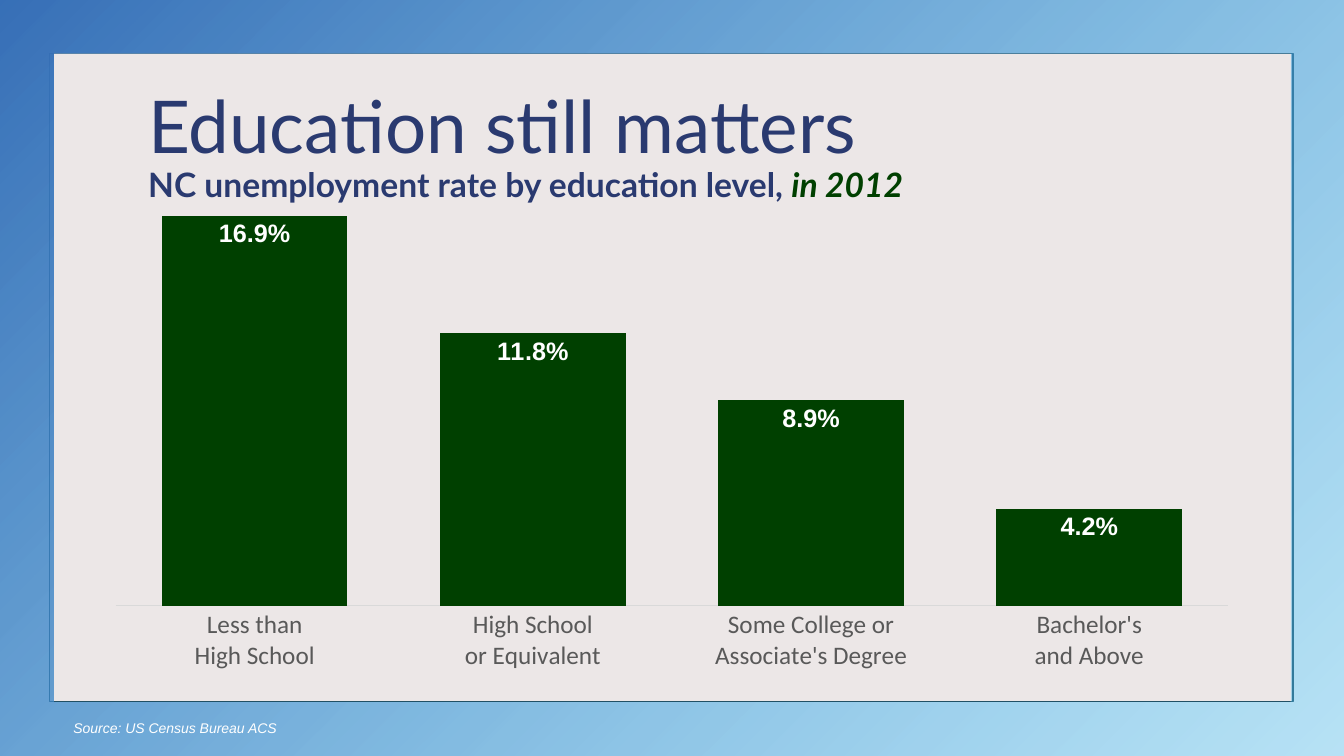
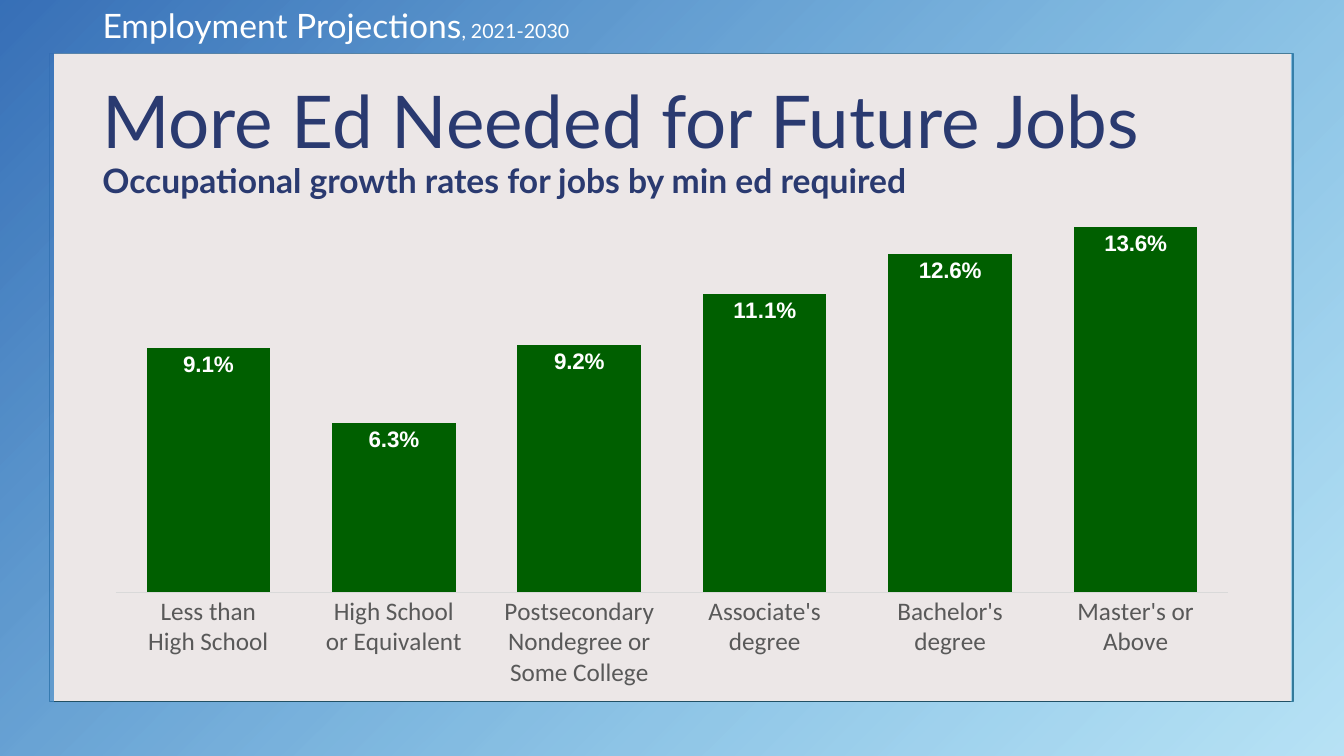
"""Build two slides on education, unemployment and job growth."""

from dataclasses import dataclass

from lxml import etree
from pptx import Presentation
from pptx.chart.data import CategoryChartData
from pptx.dml.color import RGBColor
from pptx.enum.chart import XL_CHART_TYPE, XL_LABEL_POSITION, XL_TICK_MARK
from pptx.enum.shapes import MSO_SHAPE
from pptx.enum.text import MSO_ANCHOR, MSO_AUTO_SIZE, PP_ALIGN
from pptx.oxml.ns import qn
from pptx.slide import Slide, SlideLayout
from pptx.util import Cm, Pt

COLUMN = XL_CHART_TYPE.COLUMN_CLUSTERED
INSIDE_END = XL_LABEL_POSITION.INSIDE_END
NO_TICK = XL_TICK_MARK.NONE
RECTANGLE, FRAME = MSO_SHAPE.RECTANGLE, MSO_SHAPE.FRAME
MIDDLE = MSO_ANCHOR.MIDDLE
NO_AUTOFIT = MSO_AUTO_SIZE.NONE
LEFT = PP_ALIGN.LEFT

WHITE = RGBColor(0xFF, 0xFF, 0xFF)
NAVY = RGBColor(0x2A, 0x3A, 0x70)
DARK_GREEN = RGBColor(0x00, 0x40, 0x00)
GREEN = RGBColor(0x00, 0x5F, 0x00)
GRAY = RGBColor(0x59, 0x59, 0x59)
AXIS_GRAY = RGBColor(0xD9, 0xD9, 0xD9)
PANEL_FILL = RGBColor(0xE8, 0xE2, 0xE2)
PANEL_LINE = RGBColor(0x21, 0x50, 0x65)
FRAME_DARK = RGBColor(0x37, 0x70, 0xB8)
FRAME_LIGHT = RGBColor(0x4C, 0xB7, 0xE7)

TITLE_FONT, LABEL_FONT, BODY_FONT = "Lato", "Calibri", "Arial"
PERCENT = "0.0%"
SLIDE_WIDTH, SLIDE_HEIGHT = Cm(33.87), Cm(19.05)
CONTENT_LEFT, CONTENT_WIDTH = Cm(2.33), Cm(29.21)


@dataclass(frozen=True)
class Area:
    """A rectangle on the slide."""

    left: int
    top: int
    width: int
    height: int


@dataclass(frozen=True)
class Span:
    """A piece of text with one look."""

    text: str
    size: float
    color: RGBColor
    bold: bool = False
    italic: bool = False
    break_after: bool = False


@dataclass(frozen=True)
class ColumnChart:
    """Rates by education level, with their look."""

    area: Area
    rates: dict[str, float]
    axis_maximum: float
    color: RGBColor
    label_size: float


def set_alpha(color_element: etree._Element, percent: int) -> None:
    """Make a colour partly transparent."""
    etree.SubElement(color_element, qn("a:alpha"), val=str(percent * 1000))


def decorate_layout(layout: SlideLayout, slide: Slide) -> None:
    """Give the layout its pale panel and gradient frame."""
    panel = slide.shapes.add_shape(RECTANGLE, Cm(1.25), Cm(1.35), Cm(31.34), Cm(16.33))
    panel.fill.solid()
    panel.fill.fore_color.rgb = PANEL_FILL
    set_alpha(panel.element.find(".//" + qn("a:srgbClr")), 80)
    panel.line.color.rgb = PANEL_LINE
    panel.line.width = Pt(1)

    frame = slide.shapes.add_shape(FRAME, 0, 0, SLIDE_WIDTH, SLIDE_HEIGHT)
    frame.adjustments[0] = 0.072
    frame.fill.gradient()
    frame.fill.gradient_angle = 315
    for stop, color in zip(frame.fill.gradient_stops, (FRAME_DARK, FRAME_LIGHT)):
        stop.color.rgb = color
    set_alpha(frame.element.findall(".//" + qn("a:srgbClr"))[-1], 40)
    frame.line.fill.background()

    for position, shape in enumerate((panel, frame), start=2):
        shape.shadow.inherit = False
        layout.shapes.element.insert(position, shape.element)


def write_text(box, area: Area, paragraphs: list[list[Span]],
               font: str = TITLE_FONT, line_spacing: float = 0.9) -> None:
    """Place a text shape and fill it with formatted paragraphs."""
    box.left, box.top, box.width, box.height = area.left, area.top, area.width, area.height
    text_frame = box.text_frame
    text_frame.word_wrap = True
    text_frame.auto_size = NO_AUTOFIT
    text_frame.vertical_anchor = MIDDLE
    for index, spans in enumerate(paragraphs):
        para = text_frame.add_paragraph() if index else text_frame.paragraphs[0]
        para.alignment = LEFT
        para.line_spacing = line_spacing
        para.font.name = font
        for span in spans:
            run = para.add_run()
            run.text = span.text
            run.font.size = Pt(span.size)
            run.font.color.rgb = span.color
            run.font.bold = span.bold
            run.font.italic = span.italic
            if span.break_after:
                para.add_line_break()


def add_text(slide: Slide, area: Area, paragraphs: list[list[Span]],
             font: str = TITLE_FONT, line_spacing: float = 0.9) -> None:
    """Add a text box."""
    box = slide.shapes.add_textbox(area.left, area.top, area.width, area.height)
    write_text(box, area, paragraphs, font, line_spacing)


def add_column_chart(slide: Slide, column_chart: ColumnChart) -> None:
    """Add a column chart with value labels inside the columns."""
    data = CategoryChartData(number_format=PERCENT)
    data.categories = list(column_chart.rates)
    data.add_series("Series 1", list(column_chart.rates.values()))
    area = column_chart.area
    chart = slide.shapes.add_chart(
        COLUMN, area.left, area.top, area.width, area.height, data).chart
    chart.has_legend = False
    chart.has_title = False
    chart.font.name = BODY_FONT
    chart.font.size = Pt(10)

    category_axis = chart.category_axis
    category_axis.major_tick_mark = NO_TICK
    category_axis.format.line.color.rgb = AXIS_GRAY
    category_axis.format.line.width = Pt(0.75)
    category_font = category_axis.tick_labels.font
    category_font.name = LABEL_FONT
    category_font.size = Pt(18)
    category_font.color.rgb = GRAY

    value_axis = chart.value_axis
    value_axis.visible = False
    value_axis.has_major_gridlines = False
    value_axis.minimum_scale = 0
    value_axis.maximum_scale = column_chart.axis_maximum

    plot = chart.plots[0]
    plot.gap_width = 50
    plot.overlap = -27
    plot.vary_by_categories = False
    series = plot.series[0]
    series.format.fill.solid()
    series.format.fill.fore_color.rgb = column_chart.color
    labels = series.data_labels
    labels.show_value = True
    labels.position = INSIDE_END
    labels.number_format = PERCENT
    labels.number_format_is_linked = False
    labels.font.name = BODY_FONT
    labels.font.size = Pt(column_chart.label_size)
    labels.font.bold = True
    labels.font.color.rgb = WHITE


def build_unemployment(slide: Slide) -> None:
    """Fill the slide on unemployment by education level."""
    write_text(slide.shapes.title, Area(Cm(3.48), Cm(1.88), Cm(27), Cm(3.68)), [[
        Span("Education still matters", 52, NAVY, break_after=True),
        Span("NC unemployment rate by education level, ", 24, NAVY, bold=True),
        Span("in 2012", 24, DARK_GREEN, bold=True, italic=True),
    ]])
    add_column_chart(slide, ColumnChart(
        Area(CONTENT_LEFT, Cm(4.55), CONTENT_WIDTH, Cm(12.6)),
        {
            "Less than\nHigh School": 0.169,
            "High School\nor Equivalent": 0.118,
            "Some College or\nAssociate's Degree": 0.089,
            "Bachelor's\nand Above": 0.042,
        },
        axis_maximum=0.18, color=DARK_GREEN, label_size=18))
    add_text(slide, Area(Cm(1.6), Cm(18.01), Cm(20.7), Cm(0.69)),
             [[Span("Source: US Census Bureau ACS", 10, WHITE, italic=True)]],
             BODY_FONT, 1.0)


def build_projections(slide: Slide) -> None:
    """Fill the slide on job growth by required education."""
    write_text(slide.shapes.title, Area(CONTENT_LEFT, 0, CONTENT_WIDTH, Cm(1.4)), [[
        Span("Employment Projections", 24, WHITE),
        Span(", 2021-2030", 14, WHITE),
    ]])
    add_column_chart(slide, ColumnChart(
        Area(CONTENT_LEFT, Cm(5.21), CONTENT_WIDTH, Cm(12.37)),
        {
            "Less than\nHigh School": 0.091,
            "High School\nor Equivalent": 0.063,
            "Postsecondary Nondegree or Some College": 0.092,
            "Associate's degree": 0.111,
            "Bachelor's degree": 0.126,
            "Master's or Above": 0.136,
        },
        axis_maximum=0.14, color=GREEN, label_size=16))
    add_text(slide, Area(CONTENT_LEFT, Cm(1.4), CONTENT_WIDTH, Cm(4.42)), [
        [Span("More Ed Needed for Future Jobs", 52, NAVY)],
        [Span("Occupational growth rates for jobs by min ed required", 24, NAVY, bold=True)],
    ])


def main() -> None:
    """Build and save the deck."""
    deck = Presentation()
    deck.slide_width, deck.slide_height = SLIDE_WIDTH, SLIDE_HEIGHT
    layout = deck.slide_layouts.get_by_name("Title Only")
    unemployment = deck.slides.add_slide(layout)
    decorate_layout(layout, unemployment)
    build_unemployment(unemployment)
    build_projections(deck.slides.add_slide(layout))
    deck.save("out.pptx")


if __name__ == "__main__":
    main()
